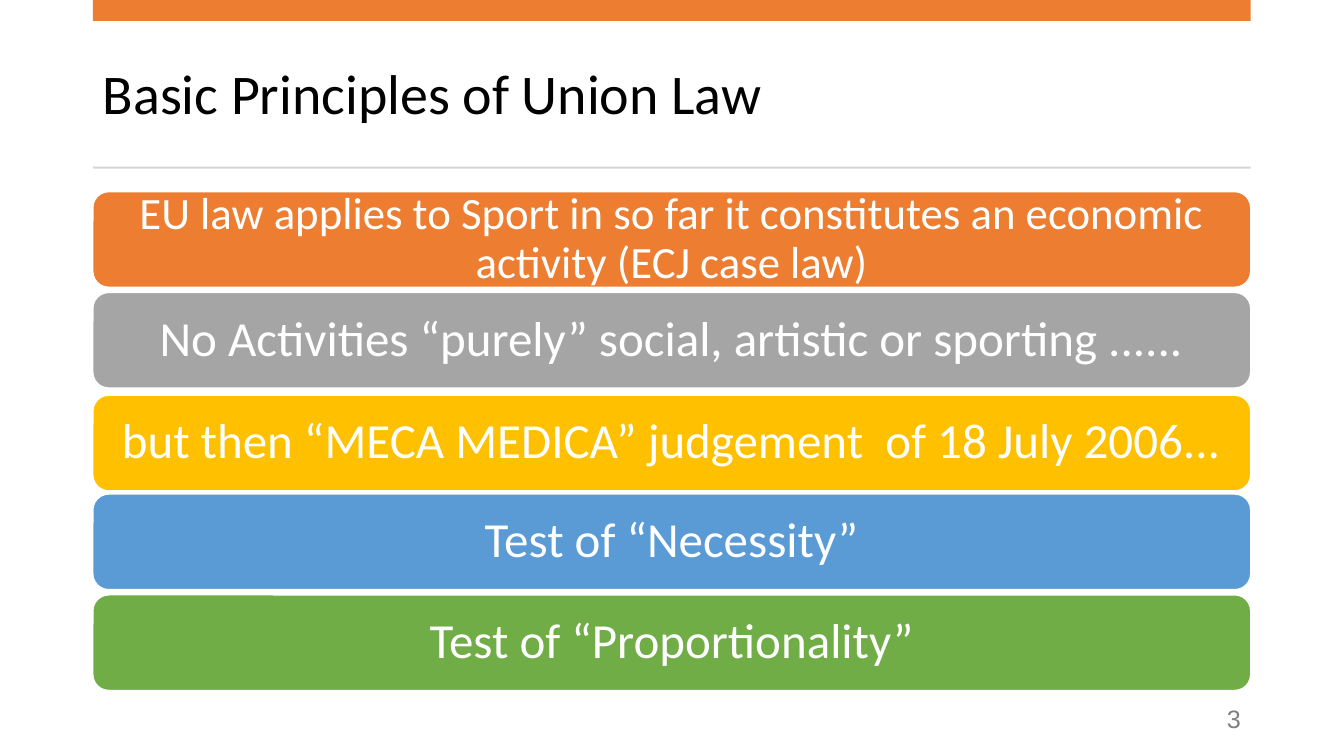
from dataclasses import dataclass

import pptx
import pptx.dml.color
import pptx.enum.shapes
import pptx.enum.text
import pptx.util
from pptx.enum.shapes import MSO_SHAPE
from pptx.enum.text import MSO_ANCHOR, MSO_AUTO_SIZE, PP_ALIGN
from pptx.util import Cm


@dataclass(frozen=True)
class Theme:
    orange: str = "ED7D31"
    gray: str = "A5A5A5"
    gold: str = "FFC000"
    blue: str = "5B9BD5"
    green: str = "70AD47"
    rule: str = "D5D5D5"
    title_text: str = "000000"
    number_text: str = "808080"
    white: str = "FFFFFF"
    heading_font: str = "Calibri"
    number_font: str = "Arial"
    title_size: int = 40
    principle_size: int = 35
    long_principle_size: int = 32
    number_size: int = 18


@dataclass(frozen=True)
class Principle:
    text: str
    color: str
    size: int
    side_inset: float = 0.38
    nudge: float = 0.0


@dataclass(frozen=True)
class TextStyle:
    size: int
    color: str
    font: str
    alignment: PP_ALIGN


THEME = Theme()
LEFT, WIDTH = 2.34, 29.18
FIRST_TOP, PITCH, BAR_HEIGHT = 4.83, 2.54, 2.41

PRINCIPLES = [
    Principle("EU law applies to Sport in so far it constitutes an economic activity (ECJ case law)",
              THEME.orange, THEME.long_principle_size, side_inset=0.33),
    Principle("No Activities “purely” social, artistic or sporting ......",
              THEME.gray, THEME.principle_size),
    Principle("but then “MECA MEDICA” judgement  of 18 July 2006...",
              THEME.gold, THEME.principle_size, nudge=0.05),
    Principle("Test of “Necessity”", THEME.blue, THEME.principle_size),
    Principle("Test of “Proportionality”", THEME.green, THEME.principle_size),
]


def rgb(color: str) -> pptx.dml.color.RGBColor:
    return pptx.dml.color.RGBColor.from_string(color)


def write_text(frame: pptx.text.text.TextFrame, text: str, style: TextStyle) -> None:
    frame.word_wrap = True
    frame.auto_size = MSO_AUTO_SIZE.NONE
    frame.vertical_anchor = MSO_ANCHOR.MIDDLE
    paragraph = frame.paragraphs[0]
    paragraph.alignment = style.alignment
    paragraph.line_spacing = 0.9
    run = paragraph.add_run()
    run.text = text
    run.font.size = pptx.util.Pt(style.size)
    run.font.name = style.font
    run.font.color.rgb = rgb(style.color)


def add_filled(slide: pptx.slide.Slide, kind: MSO_SHAPE, top: float, height: float,
               color: str) -> pptx.shapes.autoshape.Shape:
    shape = slide.shapes.add_shape(kind, Cm(LEFT), Cm(top), Cm(WIDTH), Cm(height))
    shape.shadow.inherit = False
    shape.fill.solid()
    shape.fill.fore_color.rgb = rgb(color)
    shape.line.fill.background()
    return shape


def add_principle(slide: pptx.slide.Slide, index: int, principle: Principle) -> None:
    top = FIRST_TOP + index * PITCH + principle.nudge
    shape = add_filled(slide, MSO_SHAPE.ROUNDED_RECTANGLE, top, BAR_HEIGHT, principle.color)
    shape.line.color.rgb = rgb(THEME.white)
    shape.line.width = pptx.util.Pt(1)
    frame = shape.text_frame
    frame.margin_left = frame.margin_right = Cm(principle.side_inset)
    frame.margin_top = frame.margin_bottom = Cm(0.18)
    write_text(frame, principle.text,
               TextStyle(principle.size, THEME.white, THEME.heading_font, PP_ALIGN.CENTER))


def main() -> None:
    presentation = pptx.Presentation()
    presentation.slide_width, presentation.slide_height = Cm(33.87), Cm(19.05)
    slide = presentation.slides.add_slide(presentation.slide_layouts.get_by_name("Title Only"))

    # Title
    title = slide.shapes.title
    title.left, title.top, title.width, title.height = Cm(LEFT), Cm(0.94), Cm(WIDTH), Cm(3)
    write_text(title.text_frame, "Basic Principles of Union Law",
               TextStyle(THEME.title_size, THEME.title_text, THEME.heading_font, PP_ALIGN.LEFT))

    # Top band and rule below the title
    add_filled(slide, MSO_SHAPE.RECTANGLE, 0, 0.53, THEME.orange)
    add_filled(slide, MSO_SHAPE.RECTANGLE, 4.2, 0.05, THEME.rule)

    # Slide number
    number = slide.shapes.add_textbox(Cm(24.21), Cm(17.65), Cm(7.31), Cm(1.02))
    write_text(number.text_frame, "3",
               TextStyle(THEME.number_size, THEME.number_text, THEME.number_font, PP_ALIGN.RIGHT))

    # Stacked principles
    for index, principle in enumerate(PRINCIPLES):
        add_principle(slide, index, principle)

    presentation.save("out.pptx")


if __name__ == "__main__":
    main()
